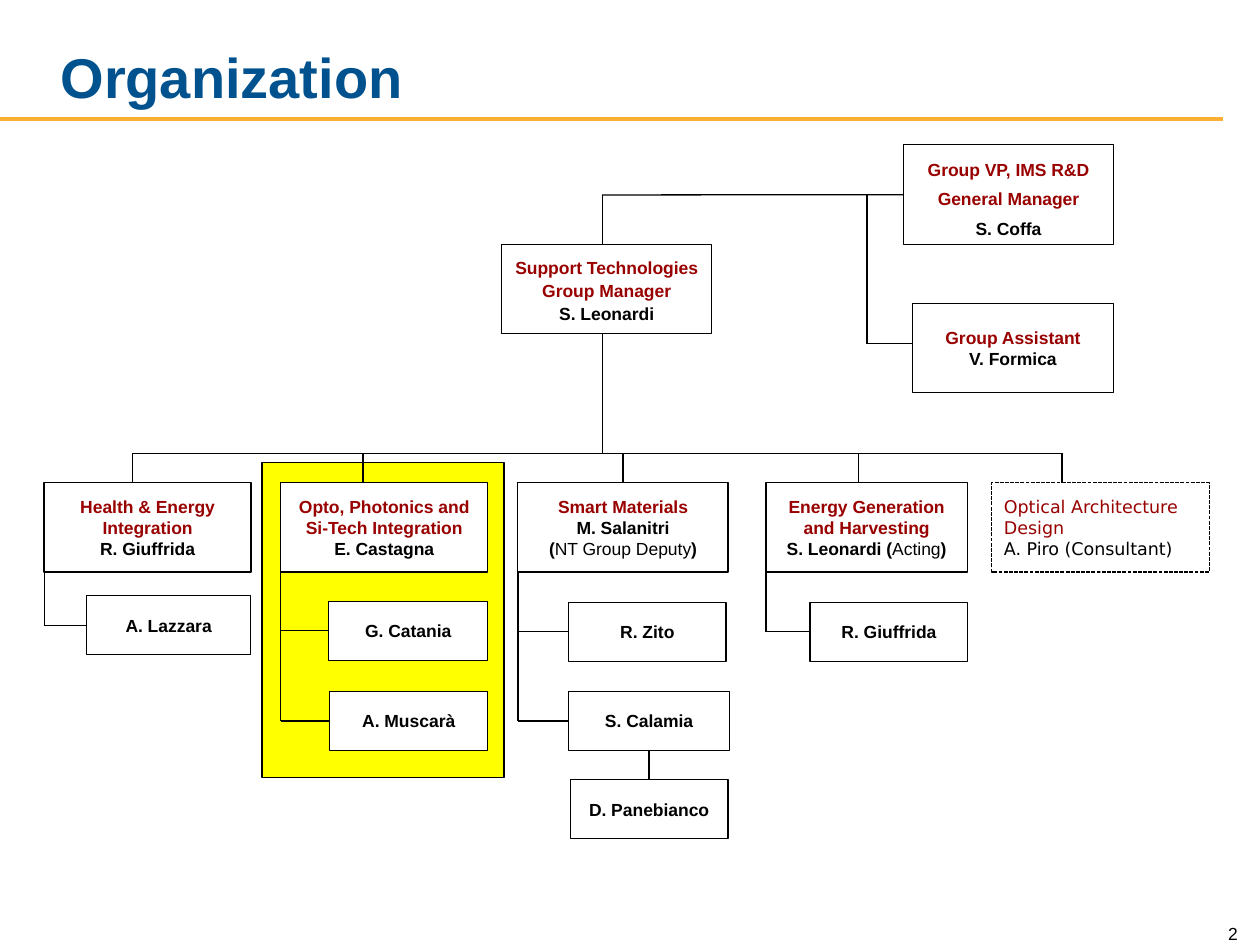
import pptx
import pptx.dml.color
import pptx.enum.dml
import pptx.enum.shapes
import pptx.enum.text
import pptx.oxml
import pptx.util
from pptx.util import Cm, Pt

COLORS = {"title": "00528E", "rule": "FBB034", "role": "990000",
          "ink": "000000", "paper": "FFFFFF", "highlight": "FFFF00"}
ALIGN = pptx.enum.text.PP_ALIGN
ANCHOR = pptx.enum.text.MSO_ANCHOR
TOP, LEFT, BOTTOM = 0, 1, 2
BOX_HEIGHT, MEMBER_HEIGHT = 1.8, 1.19
BUS_Y, TEAM_Y = 9.14, 9.73

TEAMS = [
    {"left": 0.89, "width": 4.17, "drop": 1.78,
     "roles": ["Health & Energy", "Integration"], "names": ["R. Giuffrida"],
     "members": [("A. Lazzara", 0.86, 2.28, 3.3)]},
    {"left": 5.66, "width": 4.17, "drop": 1.66,
     "roles": ["Opto, Photonics and", "Si-Tech Integration"], "names": ["E. Castagna"],
     "members": [("G. Catania", 0.97, 2.39, 3.2), ("A. Muscarà", 0.99, 4.21, 3.18)]},
    {"left": 10.44, "width": 4.24, "drop": 2.12,
     "roles": ["Smart Materials"], "names": ["M. Salanitri", "(|NT Group Deputy|)"],
     "members": [("R. Zito", 1.02, 2.41, 3.18), ("S. Calamia", 1.02, 4.21, 3.25)],
     "report": ("D. Panebianco", 5.99, 3.18)},
    {"left": 15.44, "width": 4.06, "drop": 1.86,
     "roles": ["Energy Generation", "and Harvesting"], "names": ["S. Leonardi (|Acting|)"],
     "members": [("R. Giuffrida", 0.89, 2.41, 3.18)]},
    {"left": 19.99, "width": 4.39, "drop": 1.42, "consultant": True,
     "roles": ["Optical Architecture", "Design"], "names": ["A. Piro (Consultant)"],
     "members": []},
]


def rgb(key):
    """Return the palette colour for a key."""
    return pptx.dml.color.RGBColor.from_string(COLORS[key])


def style_run(run, size, color, bold=False, font="Arial"):
    """Format one run."""
    run.font.name, run.font.size, run.font.bold = font, Pt(size), bold
    run.font.color.rgb = rgb(color)


def add_line(slide, x1, y1, x2, y2, color="ink", weight=0.75, start=None, end=None):
    """Draw a straight line, joined to (box, site) pairs where given."""
    line = slide.shapes.add_connector(
        pptx.enum.shapes.MSO_CONNECTOR.STRAIGHT, Cm(x1), Cm(y1), Cm(x2), Cm(y2))
    if start:
        line.begin_connect(*start)
    if end:
        line.end_connect(*end)
    line.line.color.rgb, line.line.width = rgb(color), Pt(weight)
    pptx.oxml.xmlchemy.OxmlElement
    line._element.spPr.append(pptx.oxml.parse_xml(
        '<a:effectLst xmlns:a="http://schemas.openxmlformats.org/drawingml/2006/main"/>'))
    return line


def add_panel(slide, left, top, width, height, fill="paper"):
    """Draw a thin-outlined rectangle."""
    panel = slide.shapes.add_shape(pptx.enum.shapes.MSO_SHAPE.RECTANGLE,
                                   Cm(left), Cm(top), Cm(width), Cm(height))
    panel.shadow.inherit = False
    panel.fill.solid()
    panel.fill.fore_color.rgb = rgb(fill)
    panel.line.color.rgb, panel.line.width = rgb("ink"), Pt(0.75)
    return panel


def add_post(slide, left, top, width, height, roles, names, spacing=1.0, consultant=False):
    """Draw a post with roles in red above names; a bar toggles regular weight."""
    post = add_panel(slide, left, top, width, height)
    frame = post.text_frame
    frame.word_wrap = consultant
    frame.vertical_anchor = ANCHOR.MIDDLE
    lines = [(text, "role") for text in roles] + [(text, "ink") for text in names]
    for index, (text, color) in enumerate(lines):
        paragraph = frame.add_paragraph() if index else frame.paragraphs[0]
        paragraph.alignment = ALIGN.LEFT if consultant else ALIGN.CENTER
        paragraph.line_spacing = spacing
        for part, words in enumerate(text.split("|")):
            run = paragraph.add_run()
            run.text = words
            style_run(run, 10, color, not consultant and part % 2 == 0,
                      "DejaVu Sans" if consultant else "Arial")
    if consultant:
        post.line.dash_style = pptx.enum.dml.MSO_LINE.SQUARE_DOT
    return post


def add_caption(slide, left, top, width, height, text, size, color, bold, align):
    """Place a single line of text at the bottom of its box."""
    caption = slide.shapes.add_textbox(Cm(left), Cm(top), Cm(width), Cm(height))
    frame = caption.text_frame
    frame.word_wrap, frame.vertical_anchor = True, ANCHOR.BOTTOM
    frame.text = text
    frame.paragraphs[0].alignment = align
    style_run(frame.paragraphs[0].runs[0], size, color, bold)


def add_frame(slide, width, height):
    """Place the title, its rule and the page number."""
    add_line(slide, 0, 2.39, width - 0.74, 2.39, "rule", 2.25)
    add_caption(slide, 0.97, 0.43, 20.75, 1.9, "Organization", 32, "title", True, ALIGN.LEFT)
    add_caption(slide, width - 1.47, height - 0.66, 1.27, 0.76, "2", 10, "ink", False,
                ALIGN.RIGHT)


def add_management(slide, left, top):
    """Place the general manager, assistant and group manager with their lines."""
    trunk, branch = left + 2.03, left + 7.37
    level, assistant_level = top + 1.01, top + 4.01
    general = add_post(slide, left + 8.1, top, 4.24, 2.01,
                       ["Group VP, IMS R&D", "General Manager"], ["S. Coffa"], 1.4)
    add_line(slide, trunk, level, left + 8.1, level, end=(general, LEFT))
    add_line(slide, trunk, level, trunk, BUS_Y)
    add_line(slide, branch, level, branch, assistant_level)
    add_line(slide, branch, assistant_level, left + 8.28, assistant_level)
    add_post(slide, left, top + 2.01, 4.24, BOX_HEIGHT,
             ["Support Technologies", "Group Manager"], ["S. Leonardi"], 1.1)
    add_post(slide, left + 8.28, top + 3.2, 4.06, BOX_HEIGHT,
             ["Group Assistant"], ["V. Formica"])


def add_team(slide, team, top):
    """Place a team lead, its drop from the bus, and its members on a spine."""
    left, drop = team["left"], team["left"] + team["drop"]
    lead = add_post(slide, left, top, team["width"], BOX_HEIGHT, team["roles"],
                    team["names"], consultant=team.get("consultant", False))
    centred = team["drop"] * 2 == team["width"]
    add_line(slide, drop, BUS_Y, drop, top, end=(lead, TOP) if centred else None)
    for name, indent, offset, width in team["members"]:
        member = add_post(slide, left + indent, top + offset, width, MEMBER_HEIGHT, [], [name])
        level = top + offset + MEMBER_HEIGHT / 2
        add_line(slide, left, level, left + indent, level, end=(member, LEFT))
    if team["members"]:
        add_line(slide, left, top + BOX_HEIGHT, left, level)
    if "report" in team:
        name, offset, report_width = team["report"]
        middle = left + indent + width / 2
        report = add_post(slide, middle - report_width / 2, top + offset, report_width,
                          MEMBER_HEIGHT, [], [name])
        add_line(slide, middle, level, middle, top + offset,
                 start=(member, BOTTOM), end=(report, TOP))


def main():
    """Build the organization slide."""
    deck = pptx.Presentation()
    width, height = 25.4, 19.05
    deck.slide_width, deck.slide_height = Cm(width), Cm(height)
    slide = deck.slides.add_slide(deck.slide_layouts[6])
    add_frame(slide, width, height)
    add_panel(slide, 5.28, 9.32, 4.88, 6.35, "highlight")
    add_management(slide, 10.11, 2.92)
    first, last = TEAMS[0], TEAMS[-1]
    add_line(slide, first["left"] + first["drop"], BUS_Y, last["left"] + last["drop"], BUS_Y)
    for team in TEAMS:
        add_team(slide, team, TEAM_Y)
    deck.save("out.pptx")


if __name__ == "__main__":
    main()
